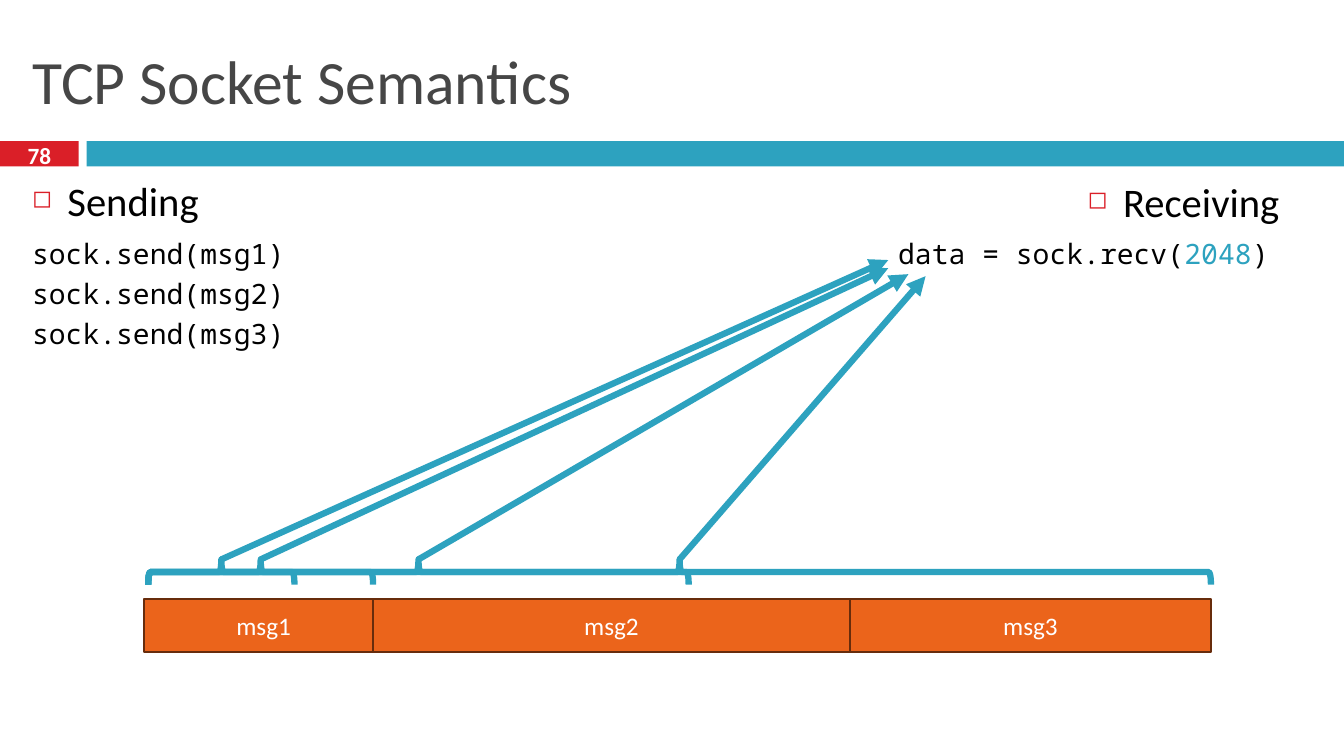
from lxml import etree
from pptx import Presentation
from pptx import util as u
from pptx.dml.color import RGBColor
from pptx.enum import shapes, text
from pptx.oxml import ns

PX = 9144  # EMU per px, 100 px to the inch
SANS, MONO = "Calibri", "Noto Sans Mono"
BLACK = RGBColor(0, 0, 0)
WHITE = RGBColor(255, 255, 255)
GREY = RGBColor(0x46, 0x46, 0x46)
RED = RGBColor(0xDA, 0x1F, 0x28)
TEAL = RGBColor(0x2D, 0xA2, 0xBF)
ORANGE = RGBColor(0xEB, 0x64, 0x1B)
BROWN = RGBColor(0x67, 0x2C, 0x0C)


def px(*lengths):
    return [u.Emu(round(length * PX)) for length in lengths]


def child(parent, tag, **attributes):
    return etree.SubElement(parent, ns.qn(tag), attributes)


def add_run(paragraph, words, size, color, font=SANS, bold=False):
    run = paragraph.add_run()
    run.text = words
    run.font.name, run.font.size, run.font.bold = font, u.Pt(size), bold
    run.font.color.rgb = color


def add_block(slide, box, kind=shapes.MSO_SHAPE.RECTANGLE, fill=None, line=None, weight=1.5):
    block = slide.shapes.add_shape(kind, *px(*box))
    block.shadow.inherit = False
    if fill is None:
        block.fill.background()
    else:
        block.fill.solid()
        block.fill.fore_color.rgb = fill
    if line is None:
        block.line.fill.background()
    else:
        block.line.color.rgb = line
        block.line.width = u.Pt(weight)
    return block


def add_frame(slide, box):
    frame = slide.shapes.add_textbox(*px(*box)).text_frame
    frame.word_wrap = True
    return frame


def center(frame):
    frame.vertical_anchor = text.MSO_ANCHOR.MIDDLE
    frame.paragraphs[0].alignment = text.PP_ALIGN.CENTER
    return frame.paragraphs[0]


def add_title(slide, box, words):
    title = slide.shapes.title
    title.left, title.top, title.width, title.height = px(*box)
    title.text_frame.vertical_anchor = text.MSO_ANCHOR.MIDDLE
    paragraph = title.text_frame.paragraphs[0]
    paragraph.alignment = text.PP_ALIGN.LEFT
    add_run(paragraph, words, 44, GREY)


def add_banner(slide, box, number):
    """Red page number cell, a gap, then the teal bar."""
    left, top, width, height = box
    cell, bar = 78, 86
    add_block(slide, (left, top, cell, height), fill=RED)
    add_block(slide, (left + bar, top, width - bar, height), fill=TEAL)
    frame = add_frame(slide, (left, top - 3, cell, 33))
    add_run(center(frame), number, 16.6, WHITE, bold=True)


def add_heading(slide, box, words):
    paragraph = add_frame(slide, box).paragraphs[0]
    paragraph.space_before = u.Pt(7)
    properties = paragraph._p.get_or_add_pPr()
    indent = px(35)[0]
    properties.set("marL", str(indent))
    properties.set("indent", str(-indent))
    child(child(properties, "a:buClr"), "a:srgbClr", val=str(RED))
    child(properties, "a:buSzPct", val="60000")
    child(properties, "a:buChar", char="◻")
    add_run(paragraph, words, 29, BLACK)


def add_code(slide, box, lines):
    """Each line is a list of (words, color) pairs."""
    frame = add_frame(slide, box)
    for index, line in enumerate(lines):
        paragraph = frame.add_paragraph() if index else frame.paragraphs[0]
        paragraph.space_before = u.Pt(7)
        paragraph.line_spacing = 0.9
        for words, color in line:
            add_run(paragraph, words, 20, color, MONO)


def add_stream(slide, box, messages):
    """Messages are (name, offset, width) within the byte stream."""
    left, top, _, height = box
    for name, offset, width in messages:
        message = add_block(slide, (left + offset, top, width, height), fill=ORANGE, line=BROWN)
        add_run(center(message.text_frame), name, 18, WHITE)


def add_read(slide, box, target):
    """Brace over the bytes of one read, with an arrow to the call."""
    left, top, width, height = box
    middle_x, middle_y = left + width / 2, top + height / 2
    upright = (middle_x - height / 2, middle_y - width / 2, height, width)
    brace = add_block(slide, upright, shapes.MSO_SHAPE.LEFT_BRACE, line=TEAL, weight=4.5)
    brace.rotation = 90
    arrow = slide.shapes.add_connector(
        shapes.MSO_CONNECTOR.STRAIGHT, *px(middle_x, top, *target))
    arrow.line.color.rgb = TEAL
    arrow.line.width = u.Pt(4.5)
    child(arrow.line._get_or_add_ln(), "a:tailEnd", type="triangle")
    child(arrow._element.spPr, "a:effectLst")


def main():
    deck = Presentation()
    deck.slide_width, deck.slide_height = px(1333, 750)
    slide = deck.slides.add_slide(deck.slide_layouts[5])

    add_title(slide, (22, 25, 1289, 108), "TCP Socket Semantics")
    add_banner(slide, (0, 140, 1333, 25), "78")

    add_heading(slide, (22, 170, 534, 70), "Sending")
    add_code(slide, (22, 233, 544, 135),
             [[(f"sock.send(msg{number})", BLACK)] for number in (1, 2, 3)])
    add_heading(slide, (1069, 171, 220, 70), "Receiving")
    add_code(slide, (881, 233, 398, 135),
             [[("data = sock.recv(", BLACK), ("2048", TEAL), (")", BLACK)]])

    add_stream(slide, (143, 594, 1058, 53),
               [("msg1", 0, 237), ("msg2", 227, 473), ("msg3", 700, 358)])
    reads = [(223, (881, 266)), (536, (901, 272)), (1054, (918, 274)), (145, (881, 258))]
    for width, target in reads:
        add_read(slide, (147, 555, width, 25), target)

    deck.save("out.pptx")


if __name__ == "__main__":
    main()
